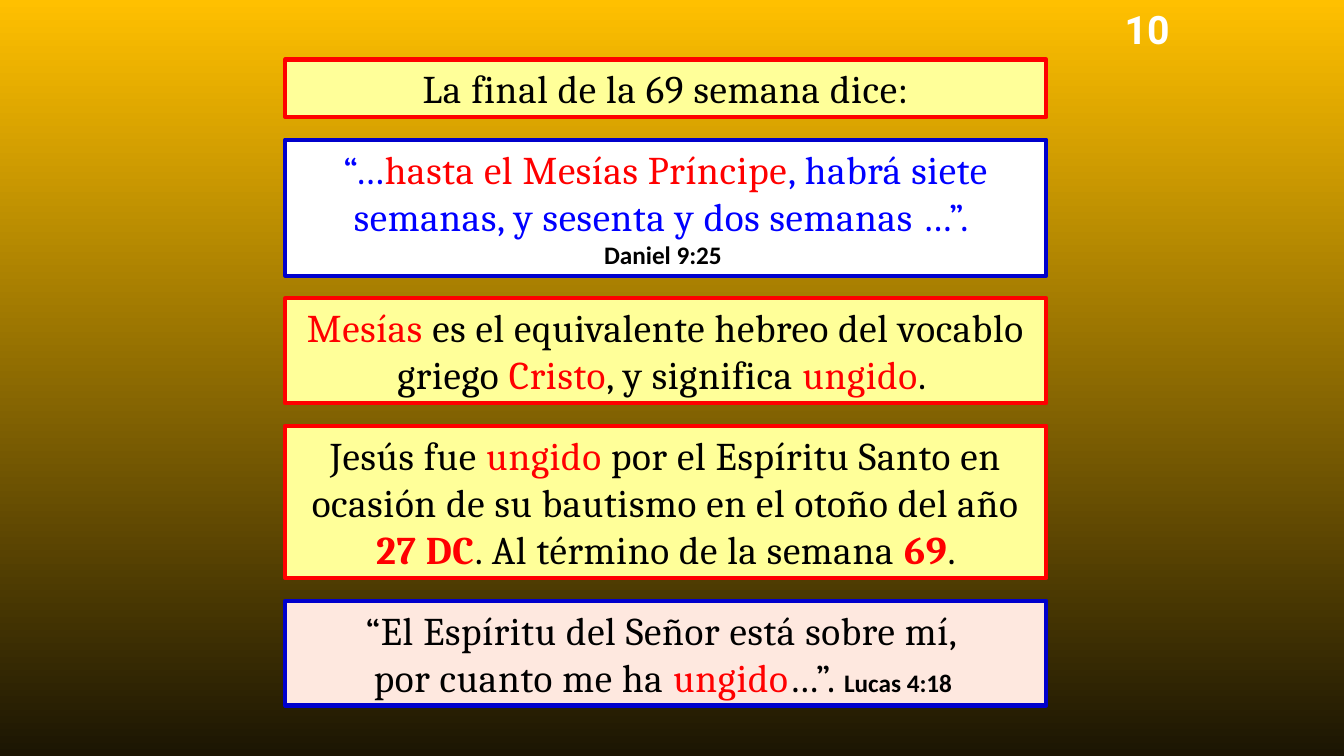
from pptx import Presentation
from pptx.dml.color import RGBColor
from pptx.enum.shapes import MSO_SHAPE
from pptx.enum.text import MSO_ANCHOR, MSO_AUTO_SIZE, PP_ALIGN
from pptx.util import Cm, Pt

RECTANGLE = MSO_SHAPE.RECTANGLE
MIDDLE = MSO_ANCHOR.MIDDLE
GROW = MSO_AUTO_SIZE.SHAPE_TO_FIT_TEXT
CENTER = PP_ALIGN.CENTER

BLACK = RGBColor(0x00, 0x00, 0x00)
WHITE = RGBColor(0xFF, 0xFF, 0xFF)
RED = RGBColor(0xFF, 0x00, 0x00)
BLUE = RGBColor(0x00, 0x00, 0xFF)
DARK_BLUE = RGBColor(0x00, 0x00, 0xCC)
YELLOW = RGBColor(0xFF, 0xFF, 0x99)
PINK = RGBColor(0xFE, 0xE8, 0xDF)
GOLD = RGBColor(0xFF, 0xC0, 0x00)
DARK_BROWN = RGBColor(0x1B, 0x15, 0x03)

BOX_LEFT, BOX_WIDTH = Cm(7.19), Cm(19.18)
FIRST_TOP, GAP = Cm(1.5), Cm(0.57)


# Run styles: each gives (text, font, size, colour, bold, letter spacing)
def body(text, color=BLACK, bold=False):
    return text, "Cambria", 28, color, bold, 0.5


def citation(text):
    return text, "Calibri", 18, BLACK, True, 0


# Boxes from top to bottom: height in cm, fill, border, paragraphs of runs
BOXES = [
    (1.45, YELLOW, RED, [[body("La final de la 69 semana dice:")]]),
    (3.43, WHITE, DARK_BLUE, [
        [body("“…", BLUE), body("hasta el Mesías Príncipe", RED),
         body(", habrá siete semanas, y sesenta y dos semanas …”. ", BLUE)],
        [citation("Daniel 9:25 ")],
    ]),
    (2.64, YELLOW, RED, [
        [body("Mesías", RED),
         body(" es el equivalente hebreo del vocablo griego "),
         body("Cristo", RED), body(", y significa "),
         body("ungido", RED), body(". ")],
    ]),
    (3.84, YELLOW, RED, [
        [body("Jesús fue "), body("ungido", RED),
         body(" por el Espíritu Santo en ocasión de su bautismo"
              " en el otoño del año "),
         body("27 DC", RED, True), body(". Al término de la semana "),
         body("69", RED, True), body(".")],
    ]),
    (2.64, PINK, DARK_BLUE, [
        [body("“El Espíritu del Señor está sobre mí, ")],
        [body("por cuanto me ha "), body("ungido", RED), body("…”. "),
         citation("Lucas 4:18 ")],
    ]),
]


def paint_background(slide):
    fill = slide.background.fill
    fill.gradient()
    fill.gradient_angle = 90
    for stop, color, position in zip(fill.gradient_stops,
                                     (DARK_BROWN, GOLD), (0, 1)):
        stop.color.rgb = color
        stop.position = position


def add_run(paragraph, text, font_name, size, color, bold, spacing):
    run = paragraph.add_run()
    run.text = text
    run.font.name = font_name
    run.font.size = Pt(size)
    run.font.bold = bold
    run.font.color.rgb = color
    if spacing:
        run.font._element.set("spc", str(int(spacing * 100)))


def write_text(text_frame, paragraphs):
    text_frame.auto_size = GROW
    for index, runs in enumerate(paragraphs):
        paragraph = (text_frame.add_paragraph() if index
                     else text_frame.paragraphs[0])
        paragraph.alignment = CENTER
        for run in runs:
            add_run(paragraph, *run)


def add_box(slide, top, height, fill, border, paragraphs):
    shape = slide.shapes.add_shape(RECTANGLE, BOX_LEFT, top, BOX_WIDTH, height)
    shape.shadow.inherit = False
    shape.fill.solid()
    shape.fill.fore_color.rgb = fill
    shape.line.color.rgb = border
    shape.line.width = Pt(3)
    shape.text_frame.word_wrap = True
    shape.text_frame.vertical_anchor = MIDDLE
    write_text(shape.text_frame, paragraphs)


def add_page_number(slide, number):
    shape = slide.shapes.add_textbox(Cm(28.02), Cm(0), Cm(1.78), Cm(1.45))
    shape.text_frame.word_wrap = False
    write_text(shape.text_frame, [[(number, "Roboto", 28, WHITE, True, 0)]])


def main():
    presentation = Presentation()
    presentation.slide_width = Cm(33.87)
    presentation.slide_height = Cm(19.05)
    slide = presentation.slides.add_slide(presentation.slide_layouts[6])
    paint_background(slide)
    add_page_number(slide, "10")

    # Stack the boxes with equal gaps
    top = FIRST_TOP
    for height, fill, border, paragraphs in BOXES:
        add_box(slide, top, Cm(height), fill, border, paragraphs)
        top += Cm(height) + GAP

    presentation.save("out.pptx")


if __name__ == "__main__":
    main()
